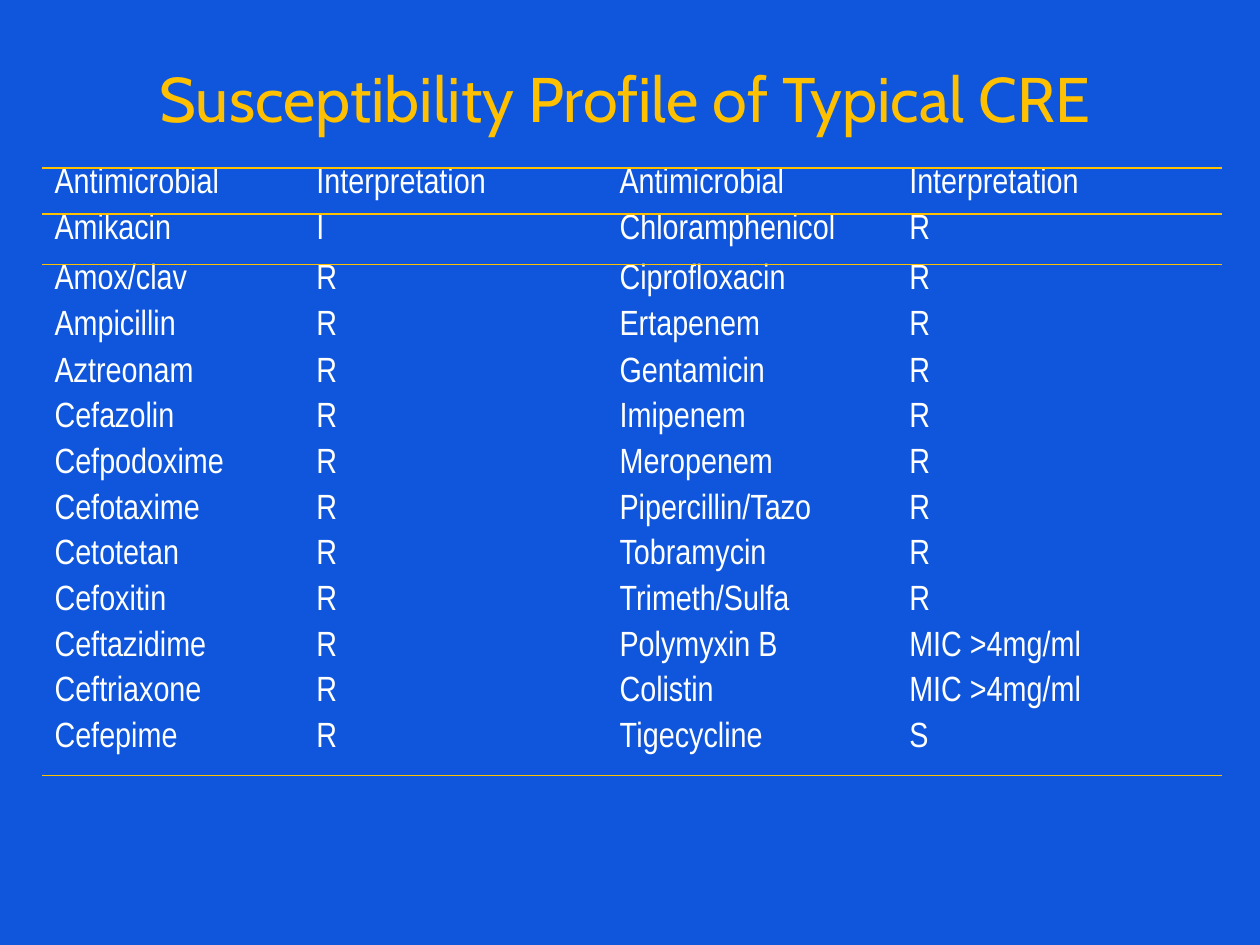
from lxml import etree
from pptx import Presentation
from pptx.dml.color import RGBColor
from pptx.enum import text
from pptx.oxml import ns
from pptx.util import Cm, Pt

BLUE = RGBColor(0x0F, 0x56, 0xDC)
GOLD = RGBColor(0xFF, 0xC0, 0x00)
WHITE = RGBColor(0xFF, 0xFF, 0xFF)
PLAIN_TABLE_STYLE = "{2D5ABB26-0587-4C30-8999-92F81FD0307C}"

COLUMN_WIDTHS = [5.28, 5.51, 0.58, 5.84, 6.55]
ROW_HEIGHT = 0.92
SPECIAL_HEIGHTS = {1: 1.02, 3: 0.94, 12: 1.08}

HEADINGS = ("Antimicrobial", "Interpretation")
LEFT_RESULTS = [("Amikacin", "I")] + [
    (drug, "R") for drug in (
        "Amox/clav", "Ampicillin", "Aztreonam", "Cefazolin", "Cefpodoxime",
        "Cefotaxime", "Cetotetan", "Cefoxitin", "Ceftazidime", "Ceftriaxone",
        "Cefepime")
]
RIGHT_RESULTS = [
    (drug, "R") for drug in (
        "Chloramphenicol", "Ciprofloxacin", "Ertapenem", "Gentamicin",
        "Imipenem", "Meropenem", "Pipercillin/Tazo", "Tobramycin",
        "Trimeth/Sulfa")
] + [("Polymyxin B", "MIC >4mg/ml"), ("Colistin", "MIC >4mg/ml"),
     ("Tigecycline", "S")]


def write(frame, words, *, font, size, color, align=text.PP_ALIGN.LEFT):
    para = frame.paragraphs[0]
    para.alignment = align
    para.font.size = Pt(size)
    if words:
        span = para.add_run()
        span.text = words
        span.font.name = font
        span.font.size = Pt(size)
        span.font.color.rgb = color


def add_title(page, words):
    box = page.shapes.add_textbox(Cm(1.07), Cm(1.07), Cm(23.06), Cm(3.18))
    frame = box.text_frame
    frame.word_wrap = True
    frame.vertical_anchor = text.MSO_ANCHOR.TOP
    write(frame, words, font="Cabin", size=36, color=GOLD,
          align=text.PP_ALIGN.CENTER)


def add_border(cell, side):
    """Draw a gold rule on one side: lnT for top, lnB for bottom."""
    properties = cell._tc.get_or_add_tcPr()
    line = etree.SubElement(properties, ns.qn(f"a:{side}"), w=str(Pt(1)))
    fill = etree.SubElement(line, ns.qn("a:solidFill"))
    etree.SubElement(fill, ns.qn("a:srgbClr"), val=str(GOLD))


def format_cell(cell, words, sides):
    cell.margin_top = cell.margin_bottom = 0
    cell.margin_left = cell.margin_right = Cm(0.25)
    cell.vertical_anchor = text.MSO_ANCHOR.TOP
    for side in sides:
        add_border(cell, side)
    cell.fill.background()
    write(cell.text_frame, words, font="Arial Narrow", size=20, color=WHITE)


def add_profile_table(page, rows):
    heights = [SPECIAL_HEIGHTS.get(i, ROW_HEIGHT) for i in range(len(rows))]
    frame = page.shapes.add_table(
        len(rows), len(COLUMN_WIDTHS), Cm(0.85), Cm(3.39),
        Cm(sum(COLUMN_WIDTHS)), Cm(sum(heights)))
    table = frame.table
    table.first_row = table.horz_banding = False
    table._tbl.tblPr.find(ns.qn("a:tableStyleId")).text = PLAIN_TABLE_STYLE
    for column, width in zip(table.columns, COLUMN_WIDTHS):
        column.width = Cm(width)

    ruled_sides = {0: ("lnT", "lnB"), 1: ("lnT",), len(rows) - 1: ("lnB",)}
    for i, values in enumerate(rows):
        table.rows[i].height = Cm(heights[i])
        for cell, words in zip(table.rows[i].cells, values):
            format_cell(cell, words, ruled_sides.get(i, ()))


def main():
    deck = Presentation()
    deck.slide_width, deck.slide_height = Cm(25.4), Cm(19.05)
    page = deck.slides.add_slide(deck.slide_layouts[6])
    page.background.fill.solid()
    page.background.fill.fore_color.rgb = BLUE

    add_title(page, "Susceptibility Profile of Typical CRE")
    pairs = [(HEADINGS, HEADINGS), *zip(LEFT_RESULTS, RIGHT_RESULTS)]
    add_profile_table(page, [(*left, "", *right) for left, right in pairs])
    deck.save("out.pptx")


if __name__ == "__main__":
    main()
